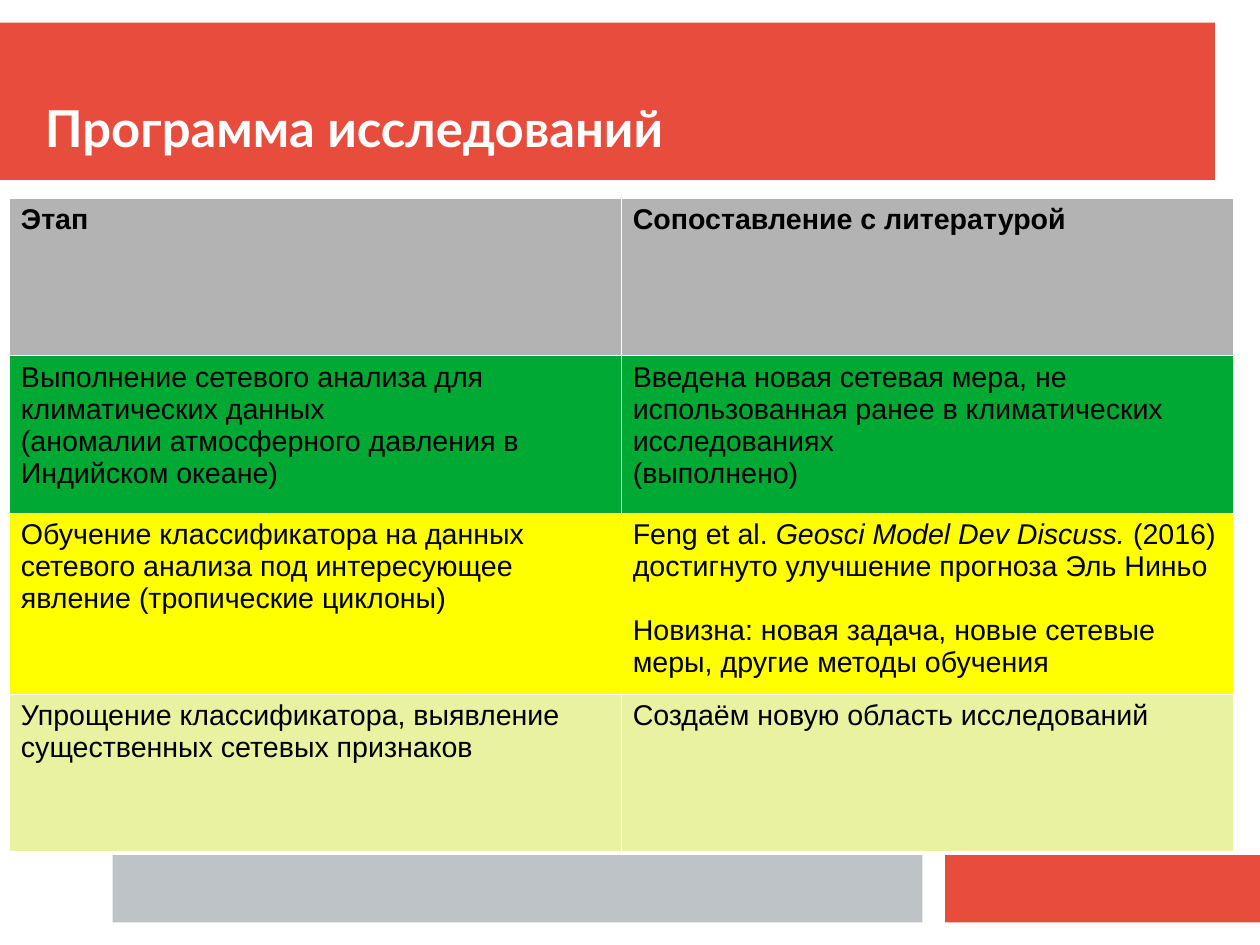
from dataclasses import dataclass

from lxml import etree
from pptx import Presentation
from pptx.dml.color import RGBColor
from pptx.enum.shapes import MSO_SHAPE
from pptx.enum.text import MSO_ANCHOR
from pptx.oxml.ns import qn
from pptx.util import Pt

RECTANGLE = MSO_SHAPE.RECTANGLE
BOTTOM = MSO_ANCHOR.BOTTOM


@dataclass(frozen=True)
class Theme:
    red: str = "E74C3C"
    silver: str = "BDC3C7"
    white: str = "FFFFFF"
    black: str = "000000"
    header: str = "B3B3B3"
    done: str = "00A933"
    current: str = "FFFF00"
    planned: str = "E8F2A1"
    title_font: str = "Lato"
    body_font: str = "Arial"
    title_size: float = 32
    body_size: float = 18
    border_width: float = 0.06


THEME = Theme()
SLIDE_WIDTH, SLIDE_HEIGHT = 793.7, 595.3
FOOTER_TOP, FOOTER_HEIGHT = 538.6, 42.5
COLUMN_WIDTH, ROW_HEIGHT = 385.4, 99.2
BLOCK_GAP = 20.2

# Each row: fill, stage, comparison. A cell is a list of blocks set apart by a
# gap, a block is a list of paragraphs, a paragraph is a list of (text, italic).
STAGES = [
    (THEME.header,
     [[[("Этап", False)]]],
     [[[("Сопоставление с литературой", False)]]]),
    (THEME.done,
     [[[("Выполнение сетевого анализа для климатических данных\n"
         "(аномалии атмосферного давления в Индийском океане)", False)]]],
     [[[("Введена новая сетевая мера, не использованная ранее "
         "в климатических исследованиях", False)],
       [("(выполнено)", False)]]]),
    (THEME.current,
     [[[("Обучение классификатора на данных сетевого анализа "
         "под интересующее явление (тропические циклоны)", False)]]],
     [[[("Feng et al. ", False), ("Geosci Model Dev Discuss.", True),
        (" (2016)", False)],
       [("достигнуто улучшение прогноза Эль Ниньо", False)]],
      [[("Новизна: новая задача, новые сетевые меры, "
         "другие методы обучения", False)]]]),
    (THEME.planned,
     [[[("Упрощение классификатора, выявление "
         "существенных сетевых признаков", False)]]],
     [[[("Создаём новую область исследований", False)]]]),
]


def write_text(frame, blocks, *, font, size, color, bold=False):
    """Fill a text frame with blocks of paragraphs in one format."""
    paragraph = None
    for block in blocks:
        for position, pieces in enumerate(block):
            first = paragraph is None
            paragraph = frame.paragraphs[0] if first else frame.add_paragraph()
            if position == 0 and not first:
                paragraph.space_before = Pt(BLOCK_GAP)
            for text, italic in pieces:
                for line_number, line in enumerate(text.split("\n")):
                    if line_number:
                        paragraph.add_line_break()
                    run = paragraph.add_run()
                    run.text = line
                    run.font.name = font
                    run.font.size = Pt(size)
                    run.font.bold = bold
                    run.font.italic = italic
                    run.font.color.rgb = RGBColor.from_string(color)


def add_band(slide, left, top, width, height, color):
    band = slide.shapes.add_shape(
        RECTANGLE, Pt(left), Pt(top), Pt(width), Pt(height))
    band.shadow.inherit = False
    band.fill.solid()
    band.fill.fore_color.rgb = RGBColor.from_string(color)
    band.line.fill.background()


def add_title(slide, text, left, top, width, height):
    frame = slide.shapes.add_textbox(
        Pt(left), Pt(top), Pt(width), Pt(height)).text_frame
    frame.word_wrap = True
    frame.vertical_anchor = BOTTOM
    frame.margin_left = frame.margin_right = 0
    frame.margin_top = frame.margin_bottom = 0
    write_text(frame, [[[(text, False)]]], font=THEME.title_font,
               size=THEME.title_size, color=THEME.white, bold=True)


def style_cell(cell, color):
    # Borders come before the fill in the cell properties
    properties = cell._tc.get_or_add_tcPr()
    for side in ("a:lnL", "a:lnR", "a:lnT", "a:lnB"):
        border = etree.SubElement(
            properties, qn(side), w=str(Pt(THEME.border_width)))
        paint = etree.SubElement(border, qn("a:solidFill"))
        etree.SubElement(paint, qn("a:srgbClr"), val=THEME.white)
    cell.fill.solid()
    cell.fill.fore_color.rgb = RGBColor.from_string(color)
    cell.margin_left = cell.margin_right = Pt(7.2)
    cell.margin_top = cell.margin_bottom = Pt(3.6)


def add_stage_table(slide, left, top):
    table = slide.shapes.add_table(
        len(STAGES), 2, Pt(left), Pt(top),
        Pt(2 * COLUMN_WIDTH), Pt(len(STAGES) * ROW_HEIGHT)).table
    table.horz_banding = False
    for column in table.columns:
        column.width = Pt(COLUMN_WIDTH)
    for row_number, (color, *contents) in enumerate(STAGES):
        table.rows[row_number].height = Pt(ROW_HEIGHT)
        for cell, blocks in zip(table.rows[row_number].cells, contents):
            style_cell(cell, color)
            write_text(cell.text_frame, blocks, font=THEME.body_font,
                       size=THEME.body_size, color=THEME.black,
                       bold=row_number == 0)


def main():
    deck = Presentation()
    deck.slide_width, deck.slide_height = Pt(SLIDE_WIDTH), Pt(SLIDE_HEIGHT)
    slide = deck.slides.add_slide(deck.slide_layouts[6])

    # Header and footer bands
    add_band(slide, 0, 14.2, 765.4, 99.2, THEME.red)
    add_band(slide, 595.3, FOOTER_TOP, 198.4, FOOTER_HEIGHT, THEME.red)
    add_band(slide, 70.9, FOOTER_TOP, 510.2, FOOTER_HEIGHT, THEME.silver)

    # Title and research programme
    add_title(slide, "Программа исследований", 28.3, 28.3, 737, 70.9)
    add_stage_table(slide, 6, 124.8)

    deck.save("out.pptx")


if __name__ == "__main__":
    main()
